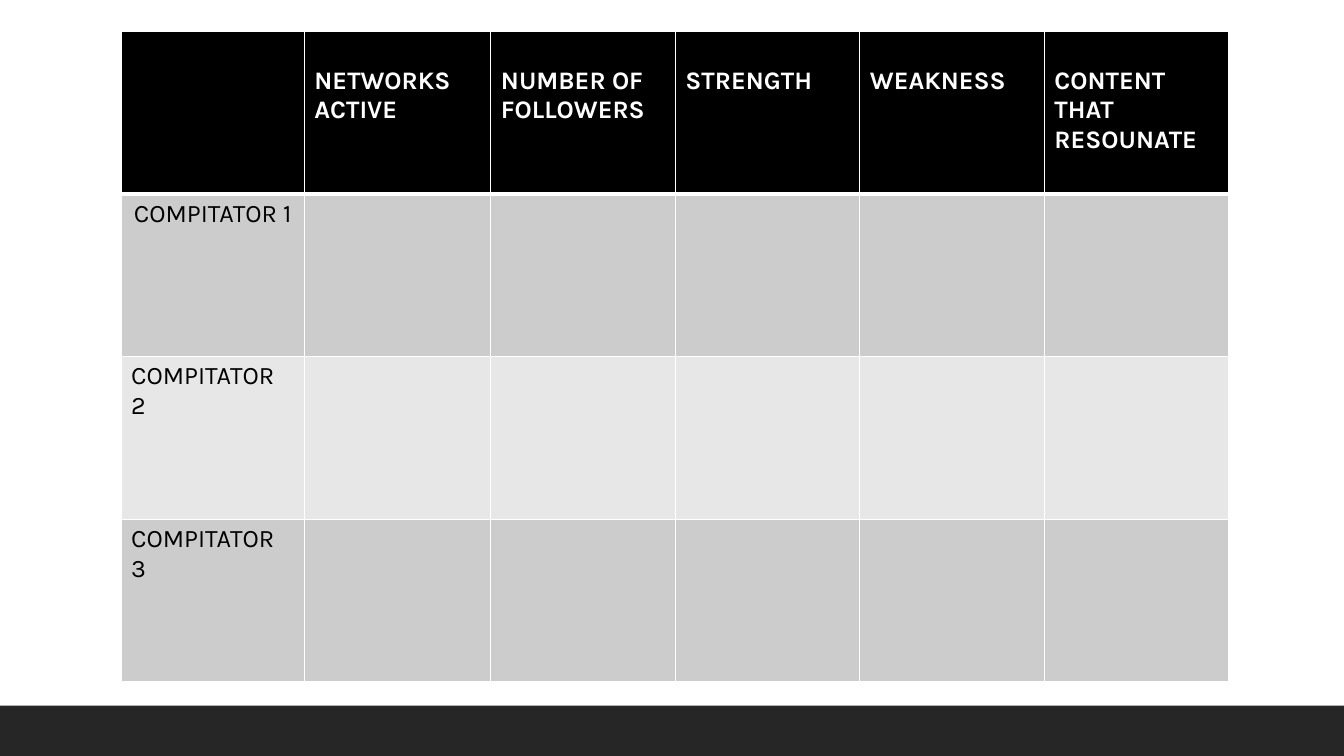
import pptx
import pptx.util
import pptx.dml.color
import pptx.enum.shapes
import pptx.enum.text
import pptx.oxml
import pptx.oxml.ns

Cm = pptx.util.Cm
Pt = pptx.util.Pt

HUES = {
    "bar": "262626",
    "head": "000000",
    "odd": "CCCCCC",
    "even": "E7E7E7",
    "rule": "FFFFFF",
    "light": "FFFFFF",
    "dark": "000000",
}
FONT = "Karla"
HEADS = ["", "NETWORKS ACTIVE", "NUMBER OF FOLLOWERS", "STRENGTH",
         "WEAKNESS", "CONTENT THAT RESOUNATE"]
RIVALS = ["COMPITATOR 1", "COMPITATOR 2", "COMPITATOR 3"]
WIDTHS = [4.62, 4.7] + [4.65] * 4
HEIGHT = 4.1


def tint(name):
    return pptx.dml.color.RGBColor.from_string(HUES[name])


def paint(item, name):
    item.fill.solid()
    item.fill.fore_color.rgb = tint(name)


def add_bar(slide):
    bar = slide.shapes.add_shape(
        pptx.enum.shapes.MSO_SHAPE.RECTANGLE, 0, Cm(17.78), Cm(33.87), Cm(1.27))
    bar.shadow.inherit = False
    paint(bar, "bar")
    bar.line.fill.background()


def add_rules(cell, top, base):
    props = cell._tc.get_or_add_tcPr()
    sides = [("L", 1), ("R", 1), ("T", top), ("B", base)]
    for place, (side, width) in enumerate(sides):
        rule = pptx.oxml.parse_xml(
            f'<a:ln{side} {pptx.oxml.ns.nsdecls("a")} w="{Pt(width)}">'
            f'<a:solidFill><a:srgbClr val="{HUES["rule"]}"/></a:solidFill>'
            f'</a:ln{side}>')
        props.insert(place, rule)


def fill_cell(cell, text, fill, ink, bold):
    cell.text_frame.text = text
    paint(cell, fill)
    for para in cell.text_frame.paragraphs:
        para.font.size = Pt(18)
        for run in para.runs:
            run.font.name = FONT
            run.font.size = Pt(18)
            run.font.bold = bold
            run.font.color.rgb = tint(ink)


def add_grid(slide):
    rows = [HEADS] + [[name] + [""] * (len(HEADS) - 1) for name in RIVALS]
    frame = slide.shapes.add_table(
        len(rows), len(HEADS), Cm(3.05), Cm(0.79),
        Cm(sum(WIDTHS)), Cm(HEIGHT * len(rows)))
    table = frame.table
    for col, width in zip(table.columns, WIDTHS):
        col.width = Cm(width)
    for r, texts in enumerate(rows):
        table.rows[r].height = Cm(HEIGHT)
        head = r == 0
        fill = "head" if head else "odd" if r % 2 else "even"
        for c, text in enumerate(texts):
            cell = table.cell(r, c)
            fill_cell(cell, text, fill, "light" if head else "dark", head)
            add_rules(cell, 3 if r == 1 else 1, 3 if head else 1)
            if head:
                cell.margin_top = Cm(0.87)
    first = table.cell(1, 0).text_frame.paragraphs[0]
    first.alignment = pptx.enum.text.PP_ALIGN.CENTER


def main():
    deck = pptx.Presentation()
    deck.slide_width = Cm(33.87)
    deck.slide_height = Cm(19.05)
    slide = deck.slides.add_slide(deck.slide_layouts[6])
    add_bar(slide)
    add_grid(slide)
    deck.save("out.pptx")


if __name__ == "__main__":
    main()
